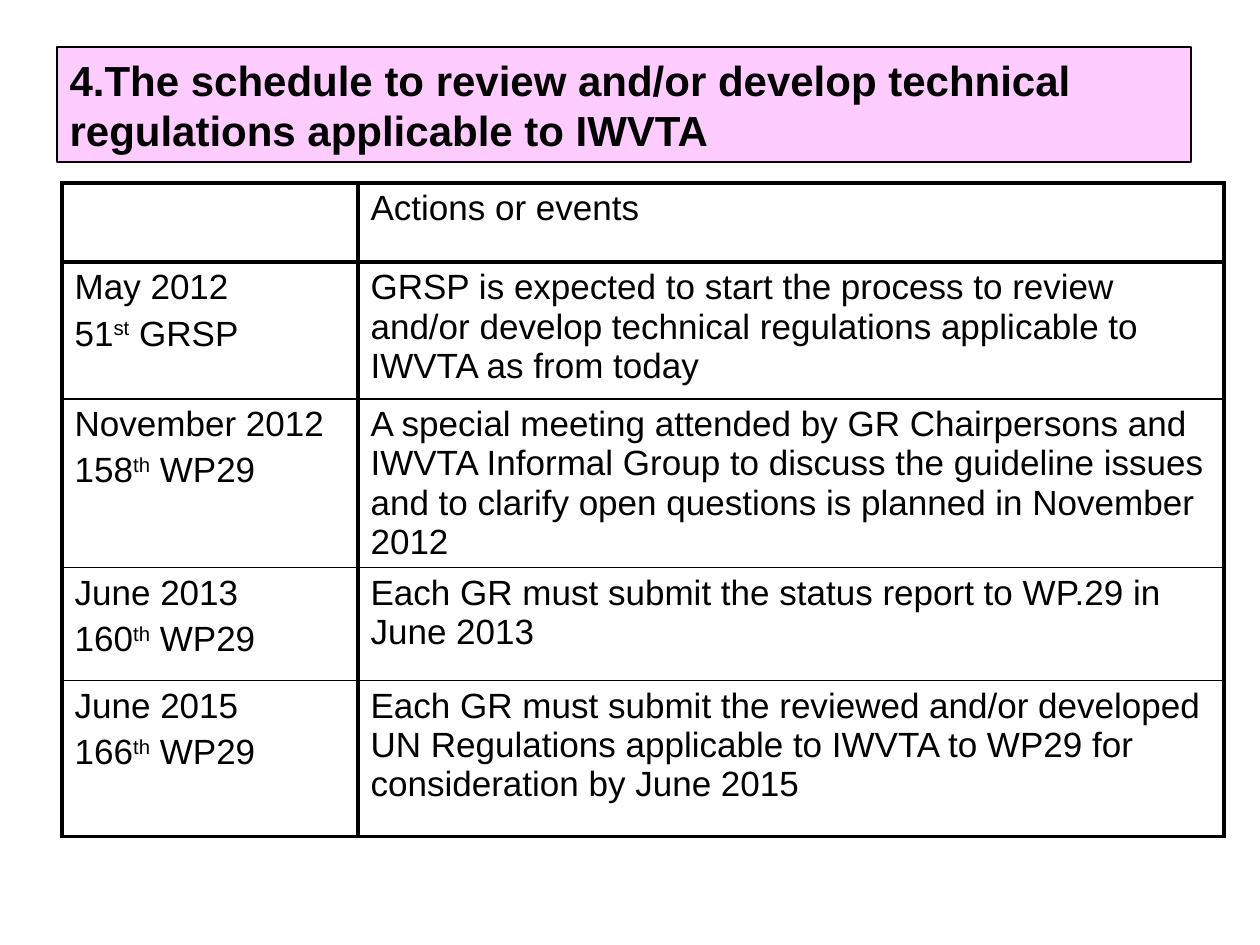
from dataclasses import dataclass

from lxml import etree
from pptx import Presentation
from pptx import util as u
from pptx.dml.color import RGBColor
from pptx.enum import text
from pptx.oxml.ns import qn


@dataclass(frozen=True)
class Theme:
    ink: str = "000000"
    title_fill: str = "FFCCFF"
    font: str = "Arial"
    title_size: int = 24
    body_size: int = 20
    thin: float = 1
    outer: float = 2.25
    thick: float = 3


theme = Theme()
PX = u.Inches(1) / 126


def px(*values):
    return [u.Emu(round(v * PX)) for v in values]


def style(p, size, bold=False):
    p.alignment = text.PP_ALIGN.LEFT
    p.font.name = theme.font
    p.font.size = u.Pt(size)
    p.font.bold = bold
    p.font.color.rgb = RGBColor.from_string(theme.ink)


schedule = [
    ("May 2012", "51", "st", " GRSP",
     "GRSP is expected to start the process to review and/or develop "
     "technical regulations applicable to IWVTA as from today"),
    ("November 2012", "158", "th", " WP29",
     "A special meeting attended by GR Chairpersons and IWVTA Informal Group "
     "to discuss the guideline issues and to clarify open questions is "
     "planned in November 2012"),
    ("June 2013", "160", "th", " WP29",
     "Each GR must submit the status report to WP.29 in June 2013"),
    ("June 2015", "166", "th", " WP29",
     "Each GR must submit the reviewed and/or developed UN Regulations "
     "applicable to IWVTA to WP29 for consideration by June 2015"),
]
col_widths = px(296, 866)
row_heights = px(79, 137, 156, 113, 156)

prs = Presentation()
prs.slide_width, prs.slide_height = px(1260, 945)
s = prs.slides.add_slide(prs.slide_layouts[5])

title = s.shapes.title
title.left, title.top, title.width, title.height = px(57, 47, 1134, 115)
title.fill.solid()
title.fill.fore_color.rgb = RGBColor.from_string(theme.title_fill)
title.line.color.rgb = RGBColor.from_string(theme.ink)
title.line.width = u.Pt(theme.thin)
tf = title.text_frame
tf.text = ("4.The schedule to review and/or develop technical "
           "regulations applicable to IWVTA")
tf.word_wrap = True
tf.auto_size = text.MSO_AUTO_SIZE.NONE
tf.vertical_anchor = text.MSO_ANCHOR.MIDDLE
style(tf.paragraphs[0], theme.title_size, bold=True)

table = s.shapes.add_table(len(row_heights), len(col_widths), *px(62, 183),
                           sum(col_widths), sum(row_heights)).table
table.first_row = False
table.horz_banding = False
for column, width in zip(table.columns, col_widths):
    column.width = width
for row, height in zip(table.rows, row_heights):
    row.height = height

table.cell(0, 1).text = "Actions or events"
for i, (date, number, suffix, session, action) in enumerate(schedule, 1):
    tf = table.cell(i, 0).text_frame
    tf.text = date
    p = tf.add_paragraph()
    p.space_before = u.Pt(4)
    for part in (number, suffix, session):
        r = p.add_run()
        r.text = part
        if part == suffix:
            r._r.get_or_add_rPr().set("baseline", "30000")
    table.cell(i, 1).text = action

column_lines = [theme.outer, theme.thick, theme.outer]
row_lines = [theme.outer, theme.thick, theme.thin, theme.thin, theme.thin,
             theme.outer]
for i, row in enumerate(table.rows):
    for j, cell in enumerate(row.cells):
        tcPr = cell._tc.get_or_add_tcPr()
        borders = {"L": column_lines[j], "R": column_lines[j + 1],
                   "T": row_lines[i], "B": row_lines[i + 1]}
        for side, width in borders.items():
            ln = etree.SubElement(tcPr, qn(f"a:ln{side}"), w=str(u.Pt(width)))
            fill = etree.SubElement(ln, qn("a:solidFill"))
            etree.SubElement(fill, qn("a:srgbClr"), val=theme.ink)
        cell.fill.background()
        for p in cell.text_frame.paragraphs:
            style(p, theme.body_size)

prs.save("out.pptx")
